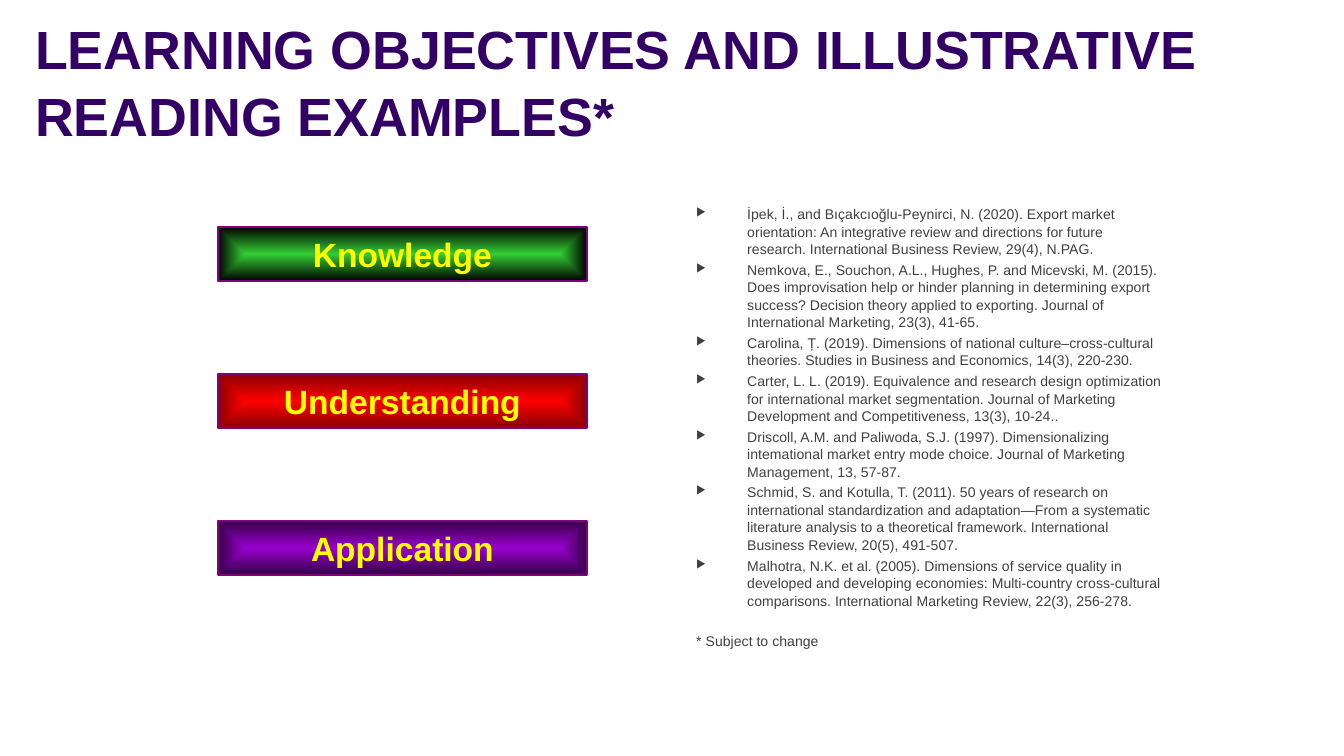
from pptx import Presentation
from pptx.dml.color import RGBColor
from pptx.enum.shapes import MSO_SHAPE
from pptx.enum.text import MSO_ANCHOR, PP_ALIGN
from pptx.oxml.ns import qn
from pptx.util import Pt
from lxml import etree

RECT = MSO_SHAPE.RECTANGLE
MIDDLE = MSO_ANCHOR.MIDDLE
CENTER = PP_ALIGN.CENTER
INDIGO = RGBColor(0x33, 0x00, 0x66)
GRAY = RGBColor(0x40, 0x40, 0x40)
YELLOW = RGBColor(0xFF, 0xFF, 0x00)
PURPLE = RGBColor(0x80, 0x00, 0x80)
GREEN = RGBColor(0x33, 0xCC, 0x33)
BLACK = RGBColor(0x00, 0x00, 0x00)
RED = RGBColor(0xFF, 0x00, 0x00)
MAROON = RGBColor(0x8A, 0x00, 0x00)
VIOLET = RGBColor(0x99, 0x00, 0xCC)
PLUM = RGBColor(0x35, 0x00, 0x47)

GOALS = [
    ("Knowledge", GREEN, BLACK),
    ("Understanding", RED, MAROON),
    ("Application", VIOLET, PLUM),
]
PAPERS = [
    "İpek, İ., and Bıçakcıoğlu-Peynirci, N. (2020). Export market orientation: An integrative review and directions for future research. International Business Review, 29(4), N.PAG.",
    "Nemkova, E., Souchon, A.L., Hughes, P. and Micevski, M. (2015). Does improvisation help or hinder planning in determining export success? Decision theory applied to exporting. Journal of International Marketing, 23(3), 41-65.",
    "Carolina, Ț. (2019). Dimensions of national culture–cross-cultural theories. Studies in Business and Economics, 14(3), 220-230.",
    "Carter, L. L. (2019). Equivalence and research design optimization for international market segmentation. Journal of Marketing Development and Competitiveness, 13(3), 10-24..",
    "Driscoll, A.M. and Paliwoda, S.J. (1997). Dimensionalizing intemational market entry mode choice. Journal of Marketing Management, 13, 57-87.",
    "Schmid, S. and Kotulla, T. (2011). 50 years of research on international standardization and adaptation—From a systematic literature analysis to a theoretical framework. International Business Review, 20(5), 491-507.",
    "Malhotra, N.K. et al. (2005). Dimensions of service quality in developed and developing economies: Multi-country cross-cultural comparisons. International Marketing Review, 22(3), 256-278.",
]


def px(n):
    return round(n * 914400 / 134.4)


def write(para, text, size, color, bold=False):
    run = para.add_run()
    run.text = text
    font = run.font
    font.name = "Arial"
    font.size = Pt(size)
    font.bold = bold
    font.color.rgb = color


deck = Presentation()
deck.slide_width = px(1344)
deck.slide_height = px(756)
slide = deck.slides.add_slide(deck.slide_layouts[6])
shapes = slide.shapes

title = shapes.add_textbox(px(22), px(17), px(1286), px(126)).text_frame
title.word_wrap = True
title.vertical_anchor = MIDDLE
para = title.paragraphs[0]
para.line_spacing = 1.05
write(para, "LEARNING OBJECTIVES AND ILLUSTRATIVE READING EXAMPLES*", 28.8, INDIGO, True)

body = shapes.add_textbox(px(683), px(198), px(493), px(499)).text_frame
body.word_wrap = True
for i, paper in enumerate(PAPERS):
    para = body.add_paragraph() if i else body.paragraphs[0]
    props = para._p.get_or_add_pPr()
    props.set("marL", str(px(51)))
    props.set("indent", str(px(-51)))
    etree.SubElement(props, qn("a:buSzPct")).set("val", "80000")
    etree.SubElement(props, qn("a:buChar")).set("char", "▶")
    para.line_spacing = 1.05
    if i:
        para.space_before = Pt(1.5)
    write(para, paper, 7.5, GRAY)
note = body.add_paragraph()
note.line_spacing = 1.05
note.space_before = Pt(12.3)
write(note, "* Subject to change", 7.5, GRAY)

for i, (name, inner, outer) in enumerate(GOALS):
    box = shapes.add_shape(RECT, px(218), px(227 + 147 * i), px(369), px(54))
    box.shadow.inherit = False
    box.fill.gradient()
    for stop, color in zip(box.fill.gradient_stops, (inner, outer)):
        stop.color.rgb = color
    first, last = box.fill.gradient_stops
    first.position, last.position = 0, 1
    grad = box._element.spPr.find(qn("a:gradFill"))
    grad.remove(grad.find(qn("a:lin")))
    shade = etree.SubElement(grad, qn("a:path"))
    shade.set("path", "shape")
    focus = etree.SubElement(shade, qn("a:fillToRect"))
    for side in "ltrb":
        focus.set(side, "50000")
    box.line.color.rgb = PURPLE
    box.line.width = Pt(1)
    frame = box.text_frame
    frame.word_wrap = True
    frame.vertical_anchor = MIDDLE
    para = frame.paragraphs[0]
    para.alignment = CENTER
    write(para, name, 18, YELLOW, True)

deck.save("out.pptx")
